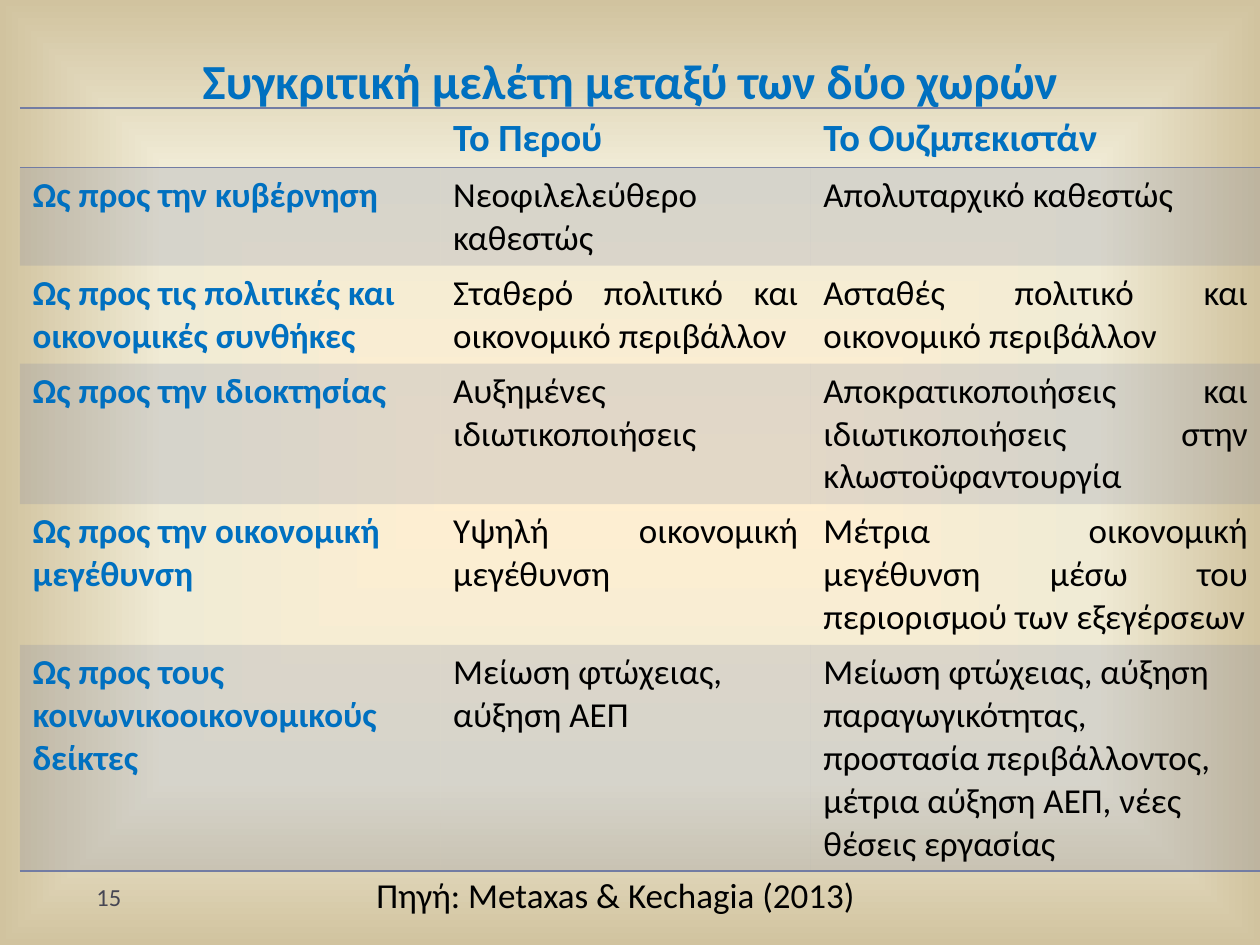
from pptx import Presentation
from pptx.dml.color import RGBColor
from pptx.enum.text import MSO_ANCHOR, PP_ALIGN
from pptx.oxml import parse_xml
from pptx.oxml.ns import nsdecls, qn
from pptx.util import Pt

LEFT, CENTER, JUSTIFY = PP_ALIGN.LEFT, PP_ALIGN.CENTER, PP_ALIGN.JUSTIFY
TOP, BOTTOM = MSO_ANCHOR.TOP, MSO_ANCHOR.BOTTOM

TITLE = "Συγκριτική μελέτη μεταξύ των δύο χωρών"
SOURCE = "Πηγή: Metaxas & Kechagia (2013)"
PAGE_NUMBER = "15"
COUNTRIES = ["", "Το Περού", "Το Ουζμπεκιστάν"]
COMPARISONS = [
    (2, JUSTIFY, ["Ως προς την κυβέρνηση",
                  "Νεοφιλελεύθερο καθεστώς",
                  "Απολυταρχικό καθεστώς"]),
    (2, JUSTIFY, ["Ως προς τις πολιτικές και οικονομικές συνθήκες",
                  "Σταθερό πολιτικό και οικονομικό περιβάλλον",
                  "Ασταθές πολιτικό και οικονομικό περιβάλλον"]),
    (3, JUSTIFY, ["Ως προς την ιδιοκτησίας",
                  "Αυξημένες ιδιωτικοποιήσεις",
                  "Αποκρατικοποιήσεις και ιδιωτικοποιήσεις στην κλωστοϋφαντουργία"]),
    (3, JUSTIFY, ["Ως προς την οικονομική μεγέθυνση",
                  "Υψηλή οικονομική μεγέθυνση",
                  "Μέτρια οικονομική μεγέθυνση μέσω του περιορισμού των εξεγέρσεων"]),
    (5, LEFT, ["Ως προς τους κοινωνικοοικονομικούς δείκτες",
               "Μείωση φτώχειας, αύξηση ΑΕΠ",
               "Μείωση φτώχειας, αύξηση παραγωγικότητας, προστασία περιβάλλοντος, "
               "μέτρια αύξηση ΑΕΠ, νέες θέσεις εργασίας"]),
]

THEME = {
    "font": "Calibri",
    "heading": "0070C0", "body": "000000", "number": "464653", "band": "727CA3",
    "band_alpha": 20,
    "backdrop": [(0, "FFEFD1"), (65, "F0EBD5"), (100, "D1C39F")],
    "title_size": 28, "country_size": 22, "body_size": 20, "number_size": 14,
}
COLUMN_WIDTHS = [240.4, 211.6, 257]
HEADER_HEIGHT, LINE_HEIGHT, CELL_PADDING = 34, 24.4, 7.2
TABLE_LEFT, TABLE_TOP = 11.4, 61.8


def write(frame, text, size, color, bold=False, align=LEFT):
    paragraph = frame.paragraphs[0]
    paragraph.alignment = align
    run = paragraph.add_run()
    run.text = text
    run.font.name = THEME["font"]
    run.font.size = Pt(THEME[size])
    run.font.bold = bold
    run.font.color.rgb = RGBColor.from_string(THEME[color])


def add_label(slide, box, text, size, color, bold=False, align=LEFT, anchor=TOP):
    frame = slide.shapes.add_textbox(*map(Pt, box)).text_frame
    frame.word_wrap = True
    frame.vertical_anchor = anchor
    write(frame, text, size, color, bold, align)


def paint_backdrop(slide):
    stops = "".join(
        f'<a:gs pos="{position * 1000}"><a:srgbClr val="{color}"/></a:gs>'
        for position, color in THEME["backdrop"])
    slide.element.cSld.insert(0, parse_xml(
        f'<p:bg {nsdecls("p", "a")}><p:bgPr><a:gradFill rotWithShape="1">'
        f'<a:gsLst>{stops}</a:gsLst><a:path path="shape">'
        '<a:fillToRect l="50000" t="50000" r="50000" b="50000"/></a:path>'
        '</a:gradFill><a:effectLst/></p:bgPr></p:bg>'))


def style_cell(cell, banded, ruled_sides):
    properties = cell._tc.get_or_add_tcPr()
    if banded:
        cell.fill.solid()
        cell.fill.fore_color.rgb = RGBColor.from_string(THEME["band"])
        tint = properties.find(qn("a:solidFill")).find(qn("a:srgbClr"))
        tint.append(parse_xml(
            f'<a:alpha {nsdecls("a")} val="{THEME["band_alpha"] * 1000}"/>'))
    else:
        cell.fill.background()
    for index, side in enumerate("LRTB"):
        line = (f'<a:solidFill><a:srgbClr val="{THEME["band"]}"/></a:solidFill>'
                if side in ruled_sides else "<a:noFill/>")
        properties.insert(index, parse_xml(
            f'<a:ln{side} {nsdecls("a")} w="12700">{line}</a:ln{side}>'))


def add_comparison(slide):
    heights = [HEADER_HEIGHT] + [
        CELL_PADDING + LINE_HEIGHT * lines for lines, _, _ in COMPARISONS]
    rows = [(LEFT, COUNTRIES)] + [(align, texts) for _, align, texts in COMPARISONS]
    frame = slide.shapes.add_table(
        len(rows), len(COLUMN_WIDTHS), Pt(TABLE_LEFT), Pt(TABLE_TOP),
        Pt(sum(COLUMN_WIDTHS)), Pt(sum(heights)))
    table = frame.table
    table.horz_banding = False
    for column, width in zip(table.columns, COLUMN_WIDTHS):
        column.width = Pt(width)
    last = len(rows) - 1
    for r, (align, texts) in enumerate(rows):
        table.rows[r].height = Pt(heights[r])
        ruled_sides = {0: "TB", 1: "T", last: "B"}.get(r, "")
        for c, text in enumerate(texts):
            cell = table.cell(r, c)
            heading = r == 0 or c == 0
            if text:
                write(cell.text_frame, text,
                      "body_size" if r else "country_size",
                      "heading" if heading else "body",
                      heading, LEFT if heading else align)
            style_cell(cell, r % 2 == 1, ruled_sides)


def main():
    deck = Presentation()
    deck.slide_width, deck.slide_height = Pt(720), Pt(540)
    slide = deck.slides.add_slide(deck.slide_layouts[6])
    paint_backdrop(slide)
    add_label(slide, (36, 12.2, 648, 54), TITLE, "title_size", "heading",
              True, CENTER, BOTTOM)
    add_label(slide, (48, 500.4, 156, 28.8), PAGE_NUMBER, "number_size", "number")
    add_comparison(slide)
    add_label(slide, (208, 495.4, 298, 31.5), SOURCE, "body_size", "body")
    deck.save("out.pptx")


if __name__ == "__main__":
    main()
